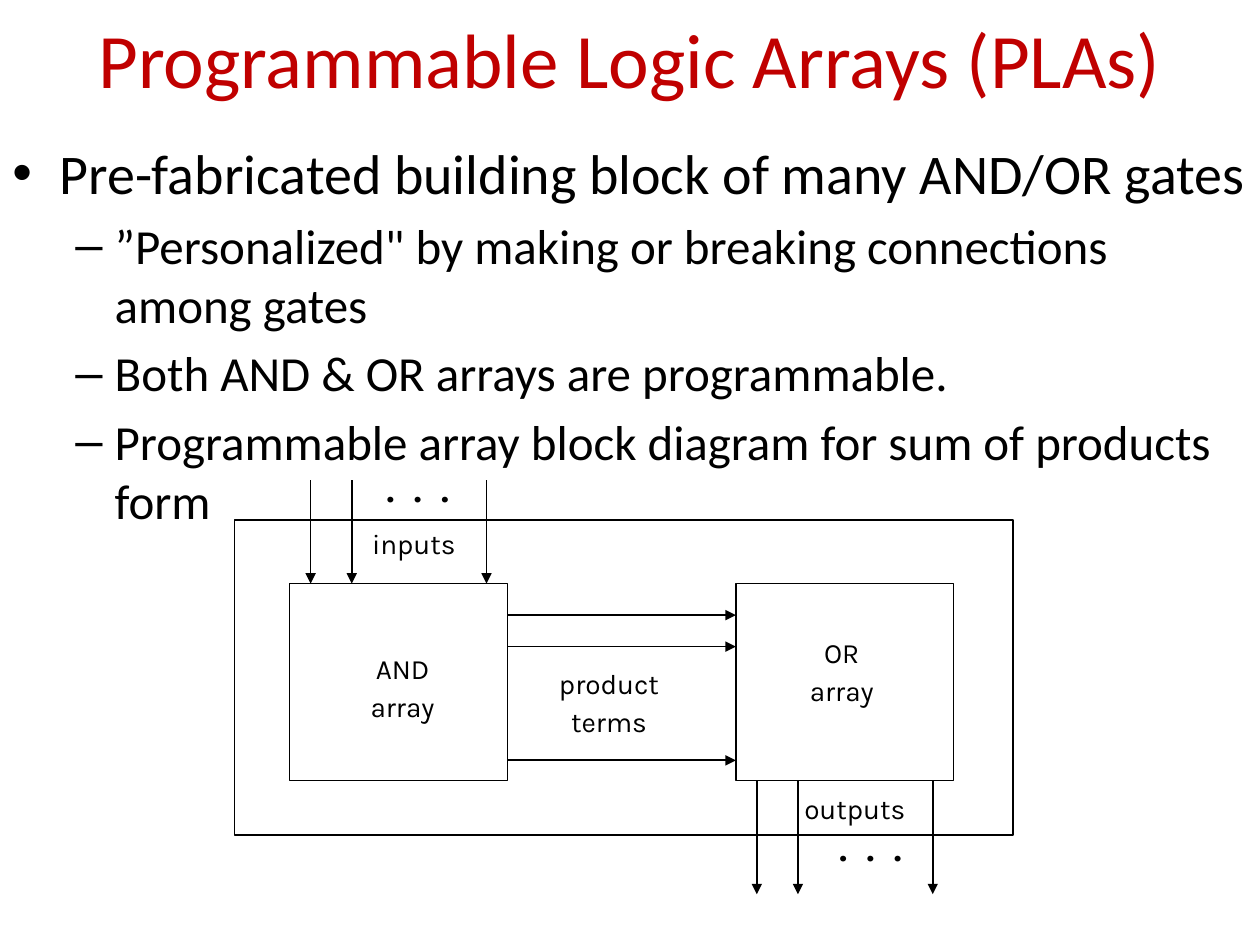
"""Build the slide on programmable logic arrays with its block diagram."""
import lxml.etree
import pptx
import pptx.dml.color
import pptx.enum.shapes
import pptx.enum.text
import pptx.oxml.ns
import pptx.util

Pt = pptx.util.Pt
qn = pptx.oxml.ns.qn
BLACK = pptx.dml.color.RGBColor(0x00, 0x00, 0x00)
RED = pptx.dml.color.RGBColor(0xC0, 0x00, 0x00)
CENTER = pptx.enum.text.PP_ALIGN.CENTER


class PlaSlide:
    """Holds the style and the current slide."""

    heading = {"name": "Calibri", "size": Pt(44)}
    topic = {"name": "Calibri", "size": Pt(32)}
    detail = {"name": "Calibri", "size": Pt(28)}
    label_font = {"name": "Karla", "size": Pt(16)}
    label_insets = {"margin_left": Pt(1.5), "margin_right": Pt(1.5),
                    "margin_top": Pt(2), "margin_bottom": Pt(2), "word_wrap": False}

    def __init__(self, deck):
        self.slide = deck.slides.add_slide(deck.slide_layouts[5])

    def apply(self, target, values):
        for key, value in values.items():
            setattr(target, key, value)

    def style_runs(self, paragraph, font, color):
        for run in paragraph.runs:
            self.apply(run.font, font)
            run.font.color.rgb = color

    def title(self, words, left, top, width, height):
        heading = self.slide.shapes.title
        self.apply(heading, {"left": Pt(left), "top": Pt(top),
                             "width": Pt(width), "height": Pt(height)})
        frame = heading.text_frame
        frame.text = words
        frame.vertical_anchor = pptx.enum.text.MSO_ANCHOR.MIDDLE
        frame.paragraphs[0].alignment = CENTER
        self.style_runs(frame.paragraphs[0], self.heading, RED)

    def textbox(self, left, top, width, height):
        return self.slide.shapes.add_textbox(
            Pt(left), Pt(top), Pt(width), Pt(height)).text_frame

    def bullets(self, items, left, top, width, height):
        outline = self.textbox(left, top, width, height)
        outline.word_wrap = True
        outline.text = "\n".join(words for level, words in items)
        levels = [("•", 27, 27, self.topic), ("–", 58.5, 22.5, self.detail)]
        for paragraph, (level, words) in zip(outline.paragraphs, items):
            mark, margin, hanging, font = levels[level]
            self.apply(paragraph, {"level": level, "space_before": Pt(font["size"].pt * 0.2)})
            self.style_runs(paragraph, font, BLACK)
            properties = paragraph._p.get_or_add_pPr()
            properties.set("marL", str(Pt(margin)))
            properties.set("indent", str(-Pt(hanging)))
            lxml.etree.SubElement(properties, qn("a:buFont"), typeface="Arial")
            lxml.etree.SubElement(properties, qn("a:buChar"), char=mark)

    def box(self, left, top, width, height):
        block = self.slide.shapes.add_shape(
            pptx.enum.shapes.MSO_SHAPE.RECTANGLE, Pt(left), Pt(top), Pt(width), Pt(height))
        block.shadow.inherit = False
        block.fill.background()
        block.line.color.rgb = BLACK
        block.line.width = Pt(1)

    def label(self, words, left, top, width, height, leading=21.7, after=19.7):
        caption = self.textbox(left, top, width, height)
        self.apply(caption, self.label_insets)
        caption.text = words
        paragraph = caption.paragraphs[0]
        self.apply(paragraph, {"alignment": CENTER, "line_spacing": Pt(leading),
                               "space_after": Pt(after)})
        self.style_runs(paragraph, self.label_font, BLACK)
        return paragraph

    def ellipsis(self, left, top, width):
        dots = self.label("• • •", left, top, width, 31, leading=20.7, after=0)
        dots.runs[0].font._element.set("spc", "370")

    def arrow(self, x1, y1, x2, y2):
        signal = self.slide.shapes.add_connector(
            pptx.enum.shapes.MSO_CONNECTOR.STRAIGHT, Pt(x1), Pt(y1), Pt(x2), Pt(y2))
        signal.line.color.rgb = BLACK
        signal.line.width = Pt(1)
        properties = signal._element.spPr
        lxml.etree.SubElement(properties.find(qn("a:ln")), qn("a:tailEnd"), type="triangle")
        lxml.etree.SubElement(properties, qn("a:effectLst"))


def main():
    deck = pptx.Presentation()
    deck.slide_width, deck.slide_height = Pt(720), Pt(540)
    pla = PlaSlide(deck)

    array_top, array_width, array_height = 333.5, 124.5, 112.5
    and_left, or_left = 165.5, 420.5
    array_bottom = array_top + array_height

    pla.box(134, 297, 445, 180)
    for array_left in (and_left, or_left):
        pla.box(array_left, array_top, array_width, array_height)
    for offset in (12, 35.5, 112.5):
        pla.arrow(and_left + offset, 274.5, and_left + offset, array_top)
        pla.arrow(or_left + offset, array_bottom, or_left + offset, 511)
    for term_y in (351.5, 369.5, 434.5):
        pla.arrow(and_left + array_width, term_y, or_left, term_y)

    pla.ellipsis(204.5, 270.5, 68.5)
    pla.ellipsis(455, 475.5, 85)
    for label in [("inputs", 200.5, 296.5, 72, 51),
                  ("AND\varray", 187.5, 367.5, 85, 73),
                  ("outputs", 443, 448, 91, 51),
                  ("OR\varray", 409, 358.5, 144, 73),
                  ("product\vterms", 291, 376.5, 114, 73)]:
        pla.label(*label)

    pla.title("Programmable Logic Arrays (PLAs)", 36, -12, 648, 90)
    pla.bullets([
        (0, "Pre-fabricated building block of many AND/OR gates"),
        (1, "”Personalized\" by making or breaking connections among gates"),
        (1, "Both AND & OR arrays are programmable."),
        (1, "Programmable array block diagram for sum of products form"),
    ], 0, 75.5, 720, 356.5)
    deck.save("out.pptx")


if __name__ == "__main__":
    main()
